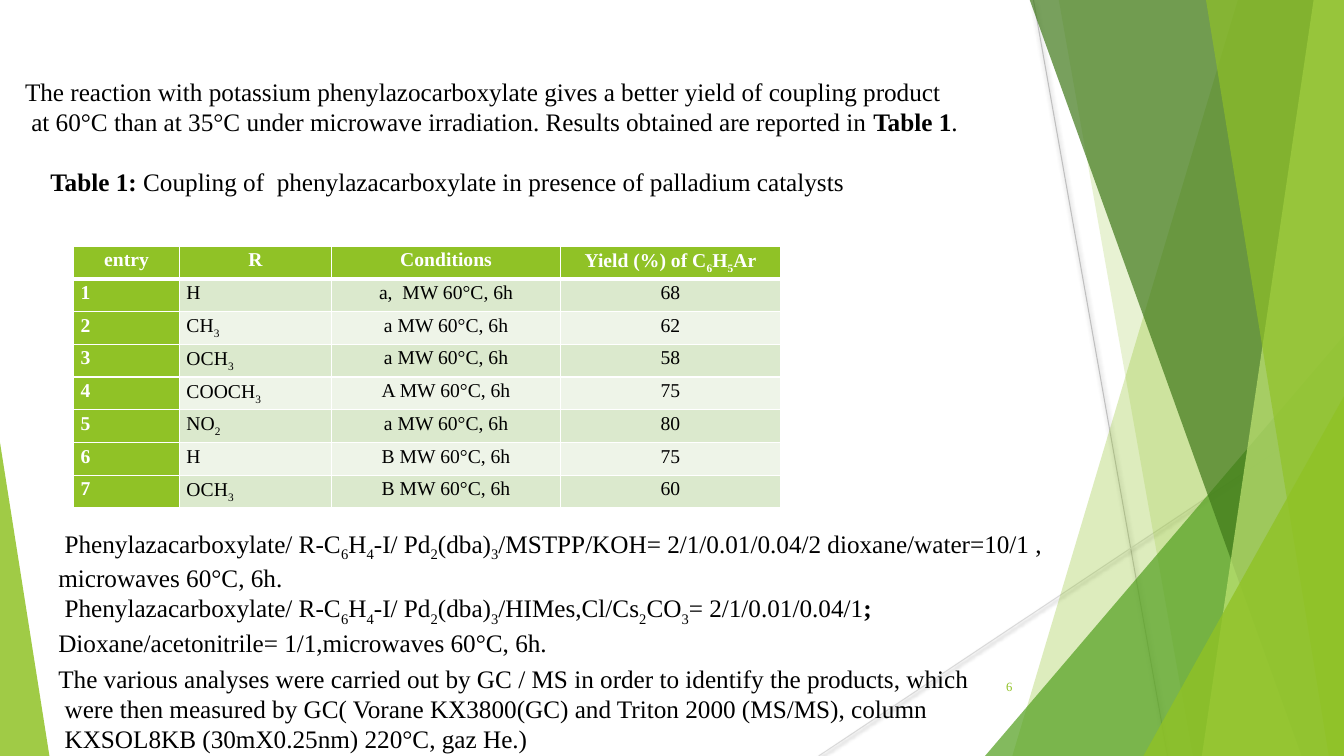
"""Build the slide on coupling yields under microwave irradiation."""
import pptx
import pptx.dml.color
import pptx.enum.shapes
import pptx.enum.text
import pptx.oxml
import pptx.oxml.ns
import pptx.util

Inches = pptx.util.Inches
Pt = pptx.util.Pt
ALIGN = pptx.enum.text.PP_ALIGN
NS = pptx.oxml.ns.nsdecls("a")
GREEN, WHITE, BLACK = "90C226", "FFFFFF", "000000"


def rgb(value):
    return pptx.dml.color.RGBColor.from_string(value)


def write(paragraph, text, size, color, align=ALIGN.LEFT, bold=False):
    """Add runs; *stars* enclose bold text and _underscores_ enclose subscripts."""
    paragraph.alignment = align
    for i, weighted in enumerate(text.split("*")):
        for j, piece in enumerate(weighted.split("_")):
            if piece:
                run = paragraph.add_run()
                run.text = piece
                run.font.name = "Times New Roman"
                run.font.size = Pt(size)
                run.font.bold = bold or i % 2 == 1
                run.font.color.rgb = rgb(color)
                if j % 2:
                    run._r.get_or_add_rPr().set("baseline", "-25000")


deck = pptx.Presentation()
deck.slide_width, deck.slide_height = Inches(13.33), Inches(7.5)
slide = deck.slides.add_slide(deck.slide_layouts[6])
shapes = slide.shapes

for x1, y1, x2, y2, color in [(10.25, 0, 11.58, 7.5, "BFBFBF"),
                              (13.33, 4.03, 8.12, 7.5, "D9D9D9")]:
    ray = shapes.add_connector(pptx.enum.shapes.MSO_CONNECTOR.STRAIGHT,
                               Inches(x1), Inches(y1), Inches(x2), Inches(y2))
    ray.line.color.rgb = rgb(color)
    ray.line.width = Pt(0.75)
    ray._element.spPr.append(pptx.oxml.parse_xml(
        f'<a:effectLst {NS}><a:outerShdw blurRad="39370" dist="20320" dir="5400000">'
        '<a:srgbClr val="000000"><a:alpha val="38000"/></a:srgbClr>'
        '</a:outerShdw></a:effectLst>'))

# Bands hold (top x, bottom x); triangles hold (left, top, width, apex).
facets = [
    ((12.28, 10.04), GREEN, 30),
    ((10.5, 11.83), GREEN, 20),
    ((9.77, 3.33, 3.56, 1), "54A021", 72),
    ((10.21, 12.91), "3F7819", 70),
    ((13.03, 11.92), "C0E474", 70),
    ((11.96, 13.18), GREEN, 65),
    ((11.34, 3.93, 1.99, 1), GREEN, 80),
    ((0, 4.39, 0.49, 0), GREEN, 85),
]
for outline, color, opacity in facets:
    if len(outline) == 2:
        top_x, bottom_x = outline
        builder = shapes.build_freeform(Inches(top_x), Inches(-0.01))
        corners = [(13.33, -0.01), (13.33, 7.5), (bottom_x, 7.5)]
        builder.add_line_segments([(Inches(x), Inches(y)) for x, y in corners])
        facet = builder.convert_to_shape()
    else:
        left, top, width, apex = outline
        facet = shapes.add_shape(pptx.enum.shapes.MSO_SHAPE.ISOSCELES_TRIANGLE,
                                 Inches(left), Inches(top), Inches(width), Inches(7.5 - top))
        facet.adjustments[0] = apex
    facet.shadow.inherit = False
    facet.line.fill.background()
    facet.fill.solid()
    facet.fill.fore_color.rgb = rgb(color)
    tint = facet._element.spPr.find(".//" + pptx.oxml.ns.qn("a:srgbClr"))
    tint.append(pptx.oxml.parse_xml(f'<a:alpha {NS} val="{opacity * 1000}"/>'))

page = shapes.add_textbox(Inches(9.39), Inches(6.61), Inches(0.75), Inches(0.4))
page.text_frame.word_wrap = True
page.text_frame.vertical_anchor = pptx.enum.text.MSO_ANCHOR.MIDDLE
write(page.text_frame.paragraphs[0], "6", 9, GREEN, ALIGN.RIGHT)

yields = [
    ("entry", "R", "Conditions", "Yield (%) of C_6_H_5_Ar"),
    ("1", "H", "a,  MW 60°C, 6h", "68"),
    ("2", "CH_3_", "a MW 60°C, 6h", "62"),
    ("3", "OCH_3_", "a MW 60°C, 6h", "58"),
    ("4", "COOCH_3_", "A MW 60°C, 6h", "75"),
    ("5", "NO_2_", "a MW 60°C, 6h", "80"),
    ("6", "H", "B MW 60°C, 6h", "75"),
    ("7", "OCH_3_", "B MW 60°C, 6h", "60"),
]
table = shapes.add_table(len(yields), 4, Inches(0.73), Inches(2.44),
                         Inches(7.01), Inches(2.6)).table
for column, width in zip(table.columns, (1.05, 1.51, 2.27, 2.18)):
    column.width = Inches(width)
for r, entry in enumerate(yields):
    for c, text in enumerate(entry):
        cell = table.cell(r, c)
        cell.margin_left = cell.margin_right = Inches(0.07)
        cell.margin_top = cell.margin_bottom = 0
        for side in "LRTB":
            weight = 3 if (r, side) in [(0, "B"), (1, "T")] else 1
            cell._tc.get_or_add_tcPr().append(pptx.oxml.parse_xml(
                f'<a:ln{side} {NS} w="{Pt(weight)}"><a:solidFill>'
                f'<a:srgbClr val="{WHITE}"/></a:solidFill></a:ln{side}>'))
        heading = r == 0 or c == 0
        cell.fill.solid()
        cell.fill.fore_color.rgb = rgb(GREEN if heading else "DBE9CD" if r % 2 else "EEF4E8")
        paragraph = cell.text_frame.paragraphs[0]
        paragraph.line_spacing = 1.15
        write(paragraph, text, 14, WHITE if heading else BLACK,
              ALIGN.CENTER if r == 0 or c > 1 else ALIGN.LEFT, heading)

passages = [
    (0.15, 0.71, 9.57, 0.71, False, [
        "The reaction with potassium phenylazocarboxylate gives a better yield of coupling product",
        " at 60°C than at 35°C under microwave irradiation. Results obtained are reported in *Table 1*."]),
    (0.4, 1.6, 8.18, 0.71, False, [
        "*Table 1: *Coupling of  phenylazacarboxylate in presence of palladium catalysts"]),
    (0.48, 5.19, 10.35, 1.62, True, [
        "* *Phenylazacarboxylate/ R-C_6_H_4_-I/ Pd_2_(dba)_3_/MSTPP/KOH= 2/1/0.01/0.04/2 "
        "dioxane/water=10/1 , microwaves 60°C, 6h.",
        "* *Phenylazacarboxylate/ R-C_6_H_4_-I/ Pd_2_(dba)_3_/HIMes,Cl/Cs_2_CO_3_= 2/1/0.01/0.04/1"
        "*; *Dioxane/acetonitrile= 1/1,microwaves 60°C, 6h."]),
    (0.48, 6.53, 9.32, 1.31, False, [
        "The various analyses were carried out by GC / MS in order to identify the products, which",
        " were then measured by GC( Vorane KX3800(GC) and Triton 2000 (MS/MS), column",
        " KXSOL8KB (30mX0.25nm) 220°C, gaz He.)"]),
]
for left, top, width, height, wraps, lines in passages:
    frame = shapes.add_textbox(Inches(left), Inches(top), Inches(width), Inches(height)).text_frame
    frame.word_wrap = wraps
    frame.auto_size = pptx.enum.text.MSO_AUTO_SIZE.SHAPE_TO_FIT_TEXT
    for i, line in enumerate(lines):
        write(frame.add_paragraph() if i else frame.paragraphs[0], line, 18, BLACK)

deck.save("out.pptx")
